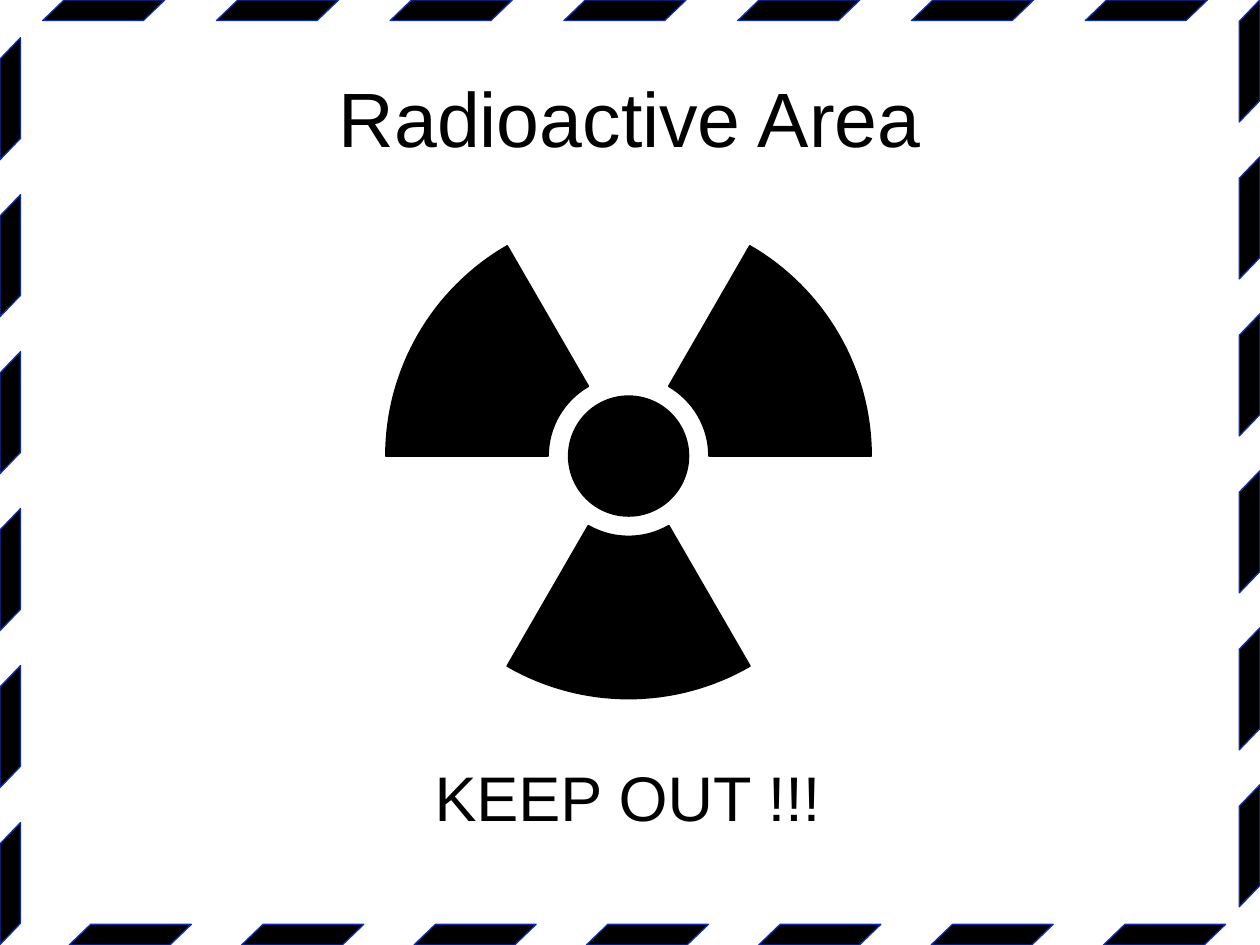
from dataclasses import dataclass
from math import cos, radians, sin

from pptx import Presentation
from pptx.dml.color import RGBColor as RGB
from pptx.enum.shapes import MSO_SHAPE as Kind
from pptx.enum.text import MSO_ANCHOR as Anchor, MSO_AUTO_SIZE as Fit, PP_ALIGN as Align
from pptx.util import Pt


@dataclass(frozen=True)
class Theme:
    ink: RGB = RGB(0, 0, 0)
    edge: RGB = RGB(0x0E, 0x2F, 0xAD)
    paper: RGB = RGB(255, 255, 255)
    font: str = "Arial"
    title: int = 44
    note: int = 36


THEME = Theme()
WIDE, HIGH = 720, 540
MID_X, MID_Y = 359.2, 260.6
OUTER, INNER, CORE = 138.6, 46, 34.2
BAR_W, BAR_H = 69.8, 11.8


def paint(shape, edge, width):
    shape.shadow.inherit = False
    shape.fill.solid()
    shape.fill.fore_color.rgb = THEME.ink
    shape.line.color.rgb = edge
    shape.line.width = Pt(width)


def add_text(slide, text, box, size, align, anchor, wrap):
    frame = slide.shapes.add_textbox(*map(Pt, box)).text_frame
    frame.word_wrap = wrap
    frame.auto_size = Fit.NONE if wrap else Fit.SHAPE_TO_FIT_TEXT
    frame.vertical_anchor = anchor
    frame.text = text
    line = frame.paragraphs[0]
    line.alignment = align
    font = line.runs[0].font
    font.name, font.size = THEME.font, Pt(size)
    font.color.rgb = THEME.ink


def arc(radius, start, end, steps):
    turns = [radians(start + (end - start) * i / steps) for i in range(steps + 1)]
    return [(Pt(MID_X + radius * cos(t)), Pt(MID_Y - radius * sin(t))) for t in turns]


def add_blade(group, start):
    dots = arc(OUTER, start, start + 60, 32) + arc(INNER, start + 60, start, 16)
    pen = group.shapes.build_freeform(*dots[0])
    pen.add_line_segments(dots[1:])
    paint(pen.convert_to_shape(), THEME.ink, 1)


def add_sign(slide):
    group = slide.shapes.add_group_shape()
    for start in (0, 240, 120):
        add_blade(group, start)
    box = (MID_X - CORE, MID_Y - CORE, 2 * CORE, 2 * CORE)
    paint(group.shapes.add_shape(Kind.OVAL, *map(Pt, box)), THEME.ink, 1)


def add_bars(slide, left, top, count, step, upright=False):
    for i in range(count):
        x, y = (left, top + i * step) if upright else (left + i * step, top)
        bar = slide.shapes.add_shape(Kind.PARALLELOGRAM, *map(Pt, (x, y, BAR_W, BAR_H)))
        bar.adjustments[0] = 1.04
        paint(bar, THEME.edge, 0.75)
        if upright:
            bar.rotation = 90
            bar.element.spPr.xfrm.set("flipH", "1")


def main():
    deck = Presentation()
    deck.slide_width, deck.slide_height = Pt(WIDE), Pt(HIGH)
    slide = deck.slides.add_slide(deck.slide_layouts[6])
    back = slide.background.fill
    back.solid()
    back.fore_color.rgb = THEME.paper

    add_text(slide, "Radioactive Area", (36, 21.6, 648, 90), THEME.title,
             Align.CENTER, Anchor.MIDDLE, True)
    add_sign(slide)
    add_text(slide, "KEEP OUT !!!", (241.2, 429.8, 236.2, 50.4), THEME.note,
             Align.LEFT, Anchor.TOP, False)

    add_bars(slide, 39.6, HIGH - BAR_H, 7, 98.5)
    add_bars(slide, 24.4, 0, 7, 99.3)
    inset = (BAR_W - BAR_H) / 2
    add_bars(slide, WIDE - BAR_H - inset, 28.9, 6, 89.7, True)
    add_bars(slide, -inset, 50.5, 6, 89.7, True)
    deck.save("out.pptx")


if __name__ == "__main__":
    main()
